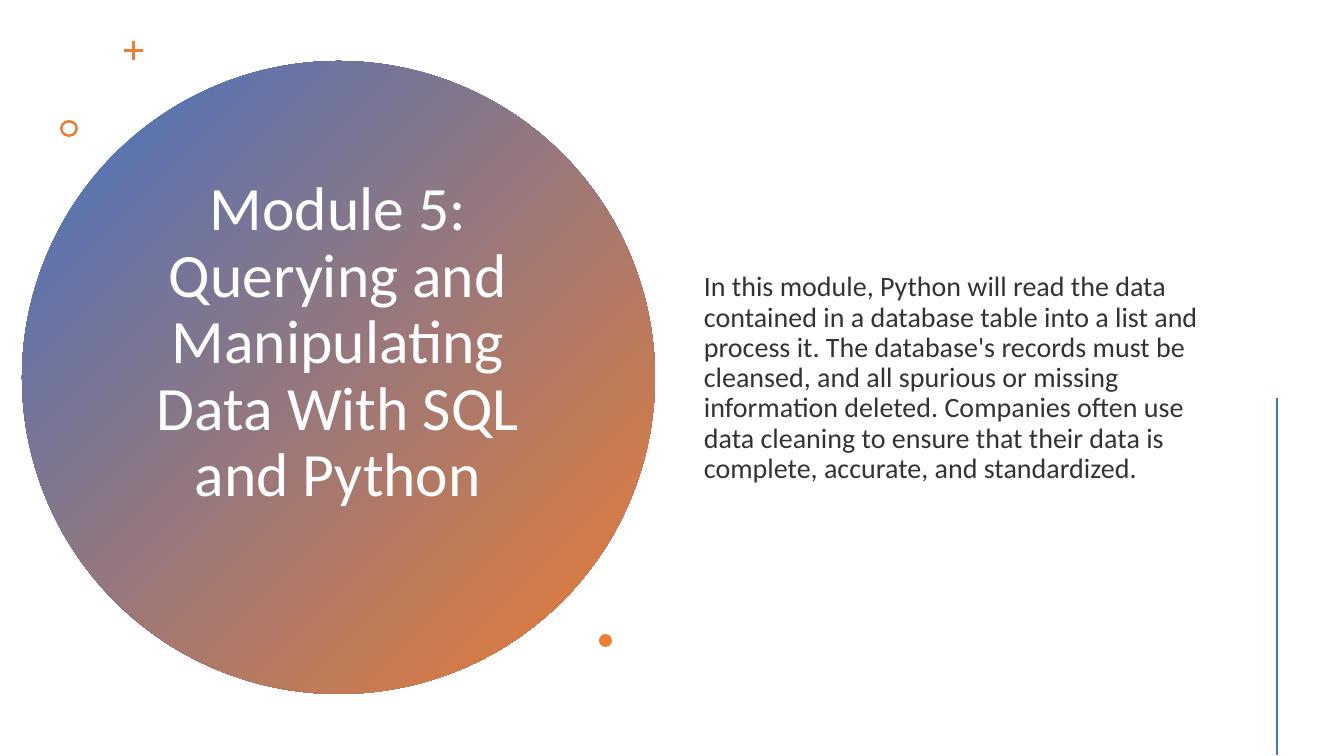
"""Build the Module 5 title slide with its gradient disc and accents."""
from dataclasses import dataclass

import pptx
import pptx.dml.color
import pptx.enum.shapes
import pptx.enum.text
import pptx.oxml
import pptx.oxml.ns
import pptx.shapes.autoshape
import pptx.slide
import pptx.util

SCALE = 914400 / 100.8
Kind = pptx.enum.shapes.MSO_SHAPE
Align = pptx.enum.text.PP_ALIGN


@dataclass(frozen=True)
class Theme:
    font: str = "Calibri"
    blue: str = "4472C4"
    orange: str = "ED7D31"
    white: str = "FFFFFF"
    ink: str = "333333"
    title: int = 44
    body: int = 20
    rule: int = 2


@dataclass(frozen=True)
class Box:
    left: int
    top: int
    width: int
    height: int


@dataclass(frozen=True)
class Mark:
    kind: Kind
    box: Box
    adjust: tuple[float, ...] = ()


@dataclass(frozen=True)
class Label:
    text: str
    box: Box
    size: int
    color: str
    align: Align
    foot: int


THEME = Theme()
DISC = Mark(Kind.OVAL, Box(22, 61, 633, 633))
MARKS = (
    Mark(Kind.CROSS, Box(124, 41, 19, 19), (0.43,)),
    Mark(Kind.DONUT, Box(60, 120, 18, 17), (0.15,)),
    Mark(Kind.OVAL, Box(599, 634, 13, 13)),
)
LABELS = (
    Label(
        "Module 5: Querying and Manipulating Data With SQL and Python",
        Box(137, 142, 402, 471), THEME.title, THEME.white, Align.CENTER, 72,
    ),
    Label(
        "In this module, Python will read the data contained in a database "
        "table into a list and process it. The database's records must be "
        "cleansed, and all spurious or missing information deleted. "
        "Companies often use data cleaning to ensure that their data is "
        "complete, accurate, and standardized.",
        Box(694, 57, 526, 643), THEME.body, THEME.ink, Align.LEFT, 5,
    ),
)


def px(count: int) -> pptx.util.Emu:
    return pptx.util.Emu(round(count * SCALE))


def place(box: Box) -> tuple[pptx.util.Emu, ...]:
    return px(box.left), px(box.top), px(box.width), px(box.height)


def rgb(color: str) -> pptx.dml.color.RGBColor:
    return pptx.dml.color.RGBColor.from_string(color)


def draw_mark(slide: pptx.slide.Slide, mark: Mark) -> pptx.shapes.autoshape.Shape:
    shape = slide.shapes.add_shape(mark.kind, *place(mark.box))
    shape.shadow.inherit = False
    shape.line.fill.background()
    shape.fill.solid()
    shape.fill.fore_color.rgb = rgb(THEME.orange)
    for index, value in enumerate(mark.adjust):
        shape.adjustments[index] = value
    return shape


def draw_disc(slide: pptx.slide.Slide) -> None:
    fill = draw_mark(slide, DISC).fill
    fill.gradient()
    fill.gradient_angle = 315
    for stop, color, spot in zip(fill.gradient_stops, (THEME.blue, THEME.orange), (0, 1)):
        stop.color.rgb = rgb(color)
        stop.position = spot


def draw_label(slide: pptx.slide.Slide, label: Label) -> None:
    frame = slide.shapes.add_textbox(*place(label.box)).text_frame
    frame.word_wrap = True
    frame.vertical_anchor = pptx.enum.text.MSO_ANCHOR.MIDDLE
    frame.margin_bottom = px(label.foot)
    frame.text = label.text
    para = frame.paragraphs[0]
    para.alignment = label.align
    para.line_spacing = 0.9
    font = para.runs[0].font
    font.name = THEME.font
    font.size = pptx.util.Pt(label.size)
    font.color.rgb = rgb(label.color)


def draw_rule(slide: pptx.slide.Slide) -> None:
    rule = slide.shapes.add_connector(
        pptx.enum.shapes.MSO_CONNECTOR.STRAIGHT, px(1277), px(398), px(1277), px(755)
    )
    rule.line.color.rgb = rgb(THEME.blue)
    rule.line.width = pptx.util.Pt(THEME.rule)
    props = rule._element.spPr
    props.append(pptx.oxml.parse_xml(f"<a:effectLst {pptx.oxml.ns.nsdecls('a')}/>"))


def main() -> None:
    deck = pptx.Presentation()
    deck.slide_width, deck.slide_height = px(1344), px(756)
    slide = deck.slides.add_slide(deck.slide_layouts[6])
    draw_disc(slide)
    for mark in MARKS:
        draw_mark(slide, mark)
    for label in LABELS:
        draw_label(slide, label)
    draw_rule(slide)
    deck.save("out.pptx")


if __name__ == "__main__":
    main()
